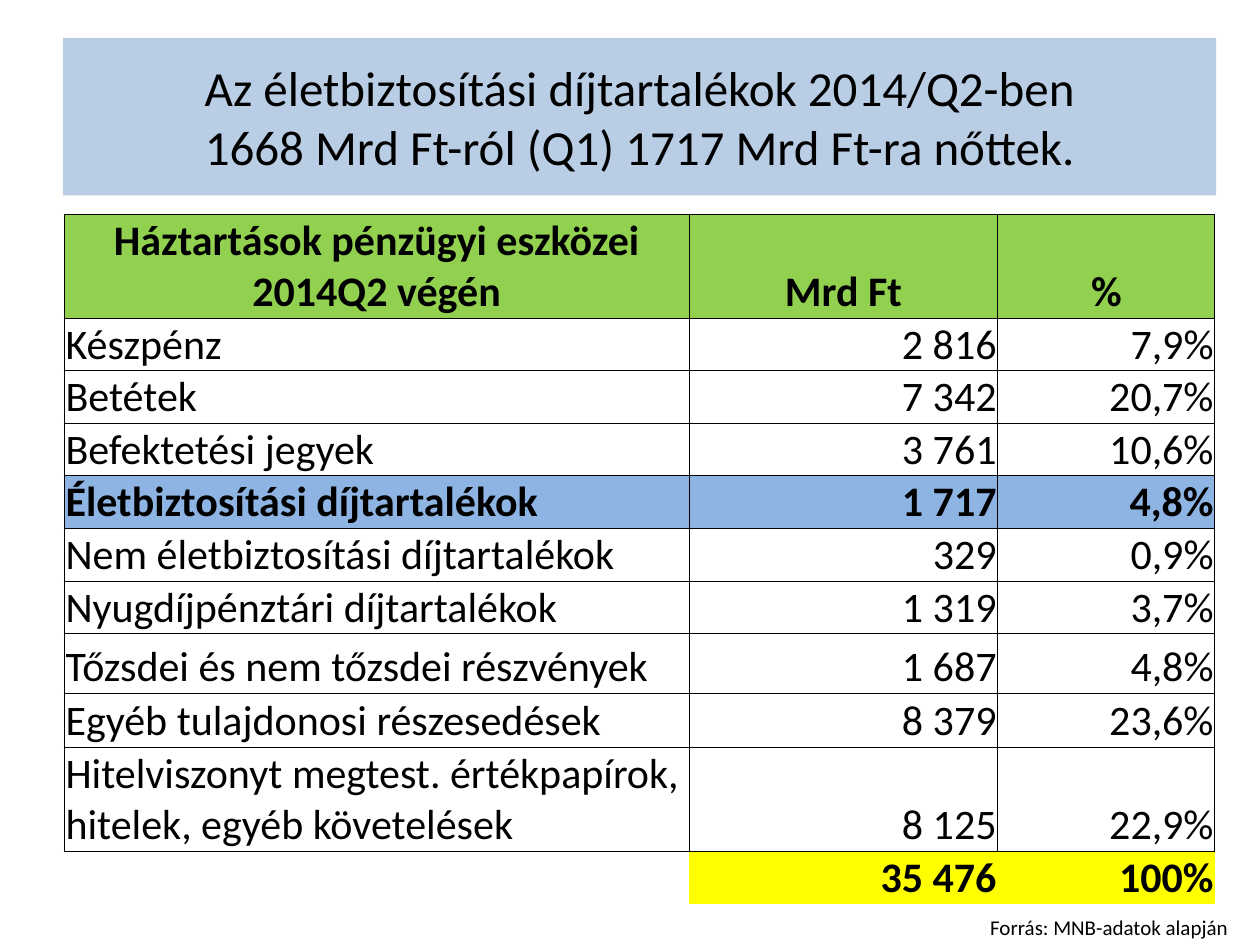
from dataclasses import dataclass
from pptx import Presentation
from pptx.dml.color import RGBColor as Rgb
from pptx.enum.shapes import MSO_SHAPE as Shape
from pptx.enum.text import MSO_ANCHOR as Anchor, PP_ALIGN as Align
from pptx.oxml import parse_xml
from pptx.oxml.ns import nsdecls
from pptx.util import Pt


@dataclass(frozen=True)
class Theme:
    font: str = "Calibri"
    ink: str = "000000"
    plain: str = "FFFFFF"
    band: str = "B9CDE5"
    head: str = "92D050"
    mark: str = "8EB4E3"
    total: str = "FFFF00"
    title: int = 28
    body: int = 24
    note: int = 12
    rule: float = 0.5


THEME = Theme()
TITLE = "Az életbiztosítási díjtartalékok 2014/Q2-ben\n1668 Mrd Ft-ról (Q1) 1717 Mrd Ft-ra nőttek."
ROWS = [
    ("Háztartások pénzügyi eszközei 2014Q2 végén", "Mrd Ft", "%"),
    ("Készpénz", "2 816", "7,9%"),
    ("Betétek", "7 342", "20,7%"),
    ("Befektetési jegyek", "3 761", "10,6%"),
    ("Életbiztosítási díjtartalékok", "1 717", "4,8%"),
    ("Nem életbiztosítási díjtartalékok", "329", "0,9%"),
    ("Nyugdíjpénztári díjtartalékok", "1 319", "3,7%"),
    ("Tőzsdei és nem tőzsdei részvények", "1 687", "4,8%"),
    ("Egyéb tulajdonosi részesedések", "8 379", "23,6%"),
    ("Hitelviszonyt megtest. értékpapírok, hitelek, egyéb követelések", "8 125", "22,9%"),
    ("", "35 476", "100%"),
]
COLS = [357, 176.5, 124]
LOW = 28
TALL = {0: 55.5, 5: 30, 7: 34, 8: 31, 9: 53.5}
LAST = len(ROWS) - 1
FILLS = {0: THEME.head, 4: THEME.mark, LAST: THEME.total}


def write(para, text, size, align, bold=False):
    para.text = text
    para.alignment = align
    font = para.font
    font.name, font.size, font.bold = THEME.font, Pt(size), bold
    font.color.rgb = Rgb.from_string(THEME.ink)


def add_title(slide):
    box = slide.shapes.add_shape(Shape.RECTANGLE, Pt(36), Pt(21.6), Pt(659), Pt(90))
    box.shadow.inherit = False
    box.fill.solid()
    box.fill.fore_color.rgb = Rgb.from_string(THEME.band)
    box.line.fill.background()
    frame = box.text_frame
    frame.word_wrap = True
    frame.vertical_anchor = Anchor.MIDDLE
    write(frame.paragraphs[0], TITLE, THEME.title, Align.CENTER)


def add_rules(cell, sides):
    props = cell._tc.get_or_add_tcPr()
    for side in "LRTB":
        ink = (f'<a:solidFill><a:srgbClr val="{THEME.ink}"/></a:solidFill>'
               if side in sides else "<a:noFill/>")
        props.append(parse_xml(
            f'<a:ln{side} {nsdecls("a")} w="{Pt(THEME.rule)}">{ink}</a:ln{side}>'))


def fill_cell(cell, text, row, col):
    cell.margin_left = cell.margin_right = cell.margin_top = Pt(0.75)
    cell.margin_bottom = 0
    cell.vertical_anchor = Anchor.BOTTOM
    add_rules(cell, "T" if row == LAST else "LRTB")
    cell.fill.solid()
    tint = FILLS.get(row, THEME.plain) if text else THEME.plain
    cell.fill.fore_color.rgb = Rgb.from_string(tint)
    align = Align.CENTER if row == 0 else Align.RIGHT if col else Align.LEFT
    write(cell.text_frame.paragraphs[0], text, THEME.body, align, row in FILLS)


def add_grid(slide):
    highs = [TALL.get(row, LOW) for row in range(len(ROWS))]
    grid = slide.shapes.add_table(len(ROWS), len(COLS), Pt(36.75), Pt(122.4),
                                  Pt(sum(COLS)), Pt(sum(highs))).table
    grid.first_row = grid.horz_banding = False
    for col, width in zip(grid.columns, COLS):
        col.width = Pt(width)
    for row, (high, texts) in enumerate(zip(highs, ROWS)):
        grid.rows[row].height = Pt(high)
        for col, text in enumerate(texts):
            fill_cell(grid.cell(row, col), text, row, col)


def add_note(slide):
    box = slide.shapes.add_textbox(Pt(558.75), Pt(519), Pt(161), Pt(21))
    box.text_frame.word_wrap = True
    write(box.text_frame.paragraphs[0], "Forrás: MNB-adatok alapján", THEME.note, Align.LEFT)


def main():
    deck = Presentation()
    deck.slide_width, deck.slide_height = Pt(720), Pt(540)
    slide = deck.slides.add_slide(deck.slide_layouts[6])
    add_title(slide)
    add_grid(slide)
    add_note(slide)
    deck.save("out.pptx")


if __name__ == "__main__":
    main()
